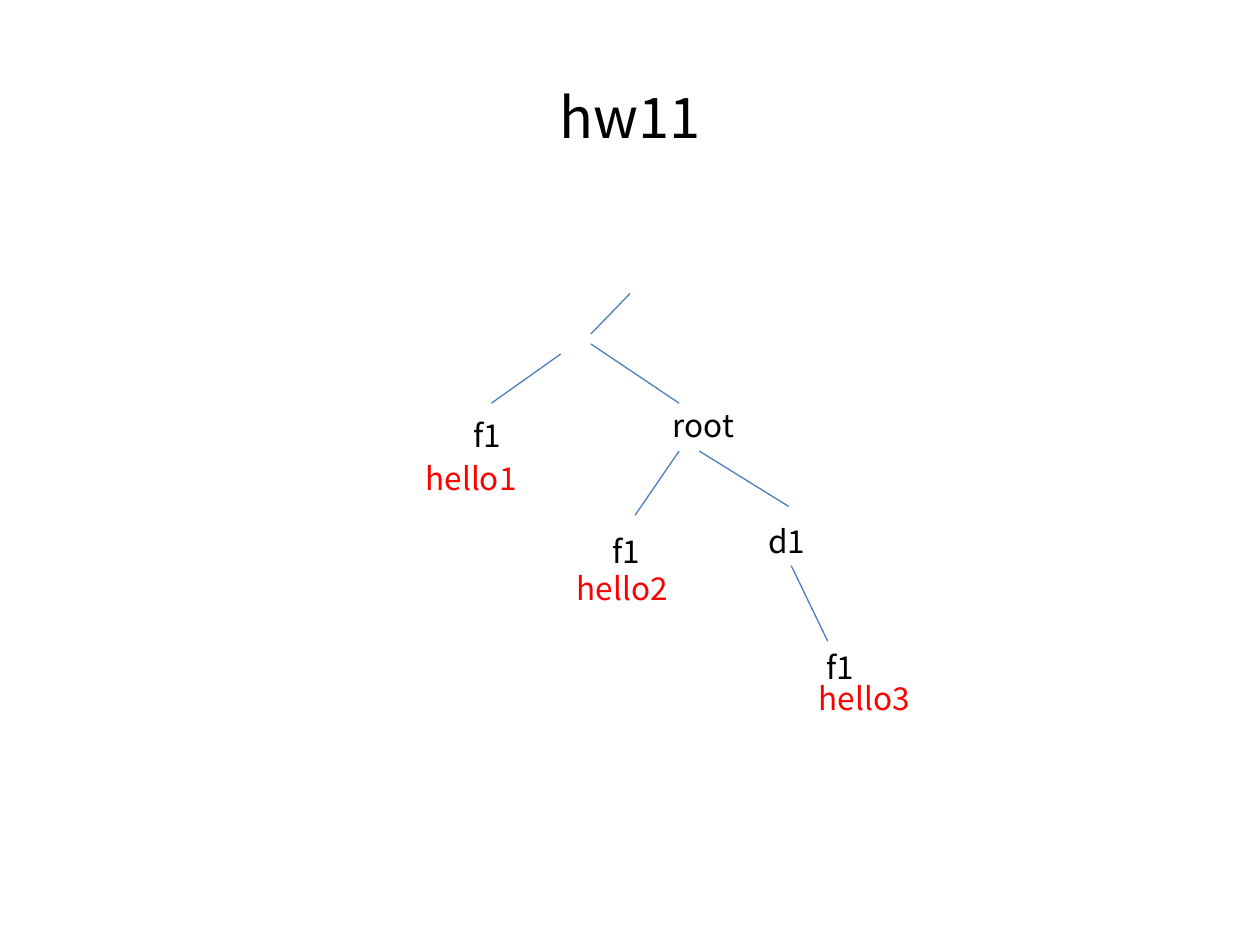
from lxml.etree import SubElement
from pptx import Presentation
from pptx.dml.color import RGBColor
from pptx.enum.shapes import MSO_CONNECTOR
from pptx.enum.text import MSO_ANCHOR, MSO_AUTO_SIZE, PP_ALIGN
from pptx.oxml.ns import qn
from pptx.util import Inches, Pt

FONT = "Noto Sans CJK KR"
BLACK, RED, BLUE = "000000", "FF0000", "4B7EBC"
LABEL_HEIGHT = 0.4
NODE_WIDTH, ROOT_WIDTH, CONTENT_WIDTH = 0.79, 2.32, 1.73

# Positions in inches from the top left corner of the tree
NODES = [
    ("f1", 0.66, 1.25, NODE_WIDTH),
    ("f1", 3.46, 3.09, NODE_WIDTH),
    ("f1", 1.76, 2.17, NODE_WIDTH),
    ("d1", 3, 2.09, NODE_WIDTH),
    ("root", 2.24, 1.17, ROOT_WIDTH),
]
FILE_CONTENTS = [
    ("hello1", 0.28, 1.59, CONTENT_WIDTH),
    ("hello2", 1.48, 2.47, CONTENT_WIDTH),
    ("hello3", 3.4, 3.34, CONTENT_WIDTH),
]
BRANCHES = [
    ((2, 0.33), (1.69, 0.65)),
    ((1.45, 0.81), (0.9, 1.2)),
    ((1.69, 0.73), (2.39, 1.2)),
    ((2.39, 1.58), (2.04, 2.09)),
    ((2.55, 1.58), (3.26, 2.02)),
    ((3.28, 2.49), (3.57, 3.09)),
]


def rgb(color):
    return RGBColor.from_string(color)


def add_run(paragraph, text, size, color):
    run = paragraph.add_run()
    run.text = text
    run.font.name = FONT
    run.font.size = Pt(size)
    run.font.color.rgb = rgb(color)


def add_title(slide, text, left, top, width, height):
    title = slide.shapes.title
    title.left, title.top = Inches(left), Inches(top)
    title.width, title.height = Inches(width), Inches(height)
    title.text_frame.vertical_anchor = MSO_ANCHOR.MIDDLE
    paragraph = title.text_frame.paragraphs[0]
    paragraph.alignment = PP_ALIGN.CENTER
    add_run(paragraph, text, 32, BLACK)


def add_label(slide, text, left, top, width, color):
    label = slide.shapes.add_textbox(
        Inches(left), Inches(top), Inches(width), Inches(LABEL_HEIGHT))
    frame = label.text_frame
    frame.word_wrap = True
    frame.auto_size = MSO_AUTO_SIZE.SHAPE_TO_FIT_TEXT
    add_run(frame.paragraphs[0], text, 18, color)


def add_branch(slide, x1, y1, x2, y2):
    branch = slide.shapes.add_connector(
        MSO_CONNECTOR.STRAIGHT, Inches(x1), Inches(y1), Inches(x2), Inches(y2))
    branch.line.color.rgb = rgb(BLUE)
    branch.line.width = Pt(0.75)
    SubElement(branch._element.spPr, qn("a:effectLst"))


def add_directory_tree(slide, left, top):
    for (x1, y1), (x2, y2) in BRANCHES:
        add_branch(slide, left + x1, top + y1, left + x2, top + y2)
    for labels, color in ((NODES, BLACK), (FILE_CONTENTS, RED)):
        for text, x, y, width in labels:
            add_label(slide, text, left + x, top + y, width, color)


def main():
    presentation = Presentation()
    presentation.slide_width = Inches(10)
    presentation.slide_height = Inches(7.5)
    slide = presentation.slides.add_slide(presentation.slide_layouts[5])
    add_title(slide, "hw11", 0.5, 0.3, 9, 1.25)
    add_directory_tree(slide, 3, 2)
    presentation.save("out.pptx")


if __name__ == "__main__":
    main()
